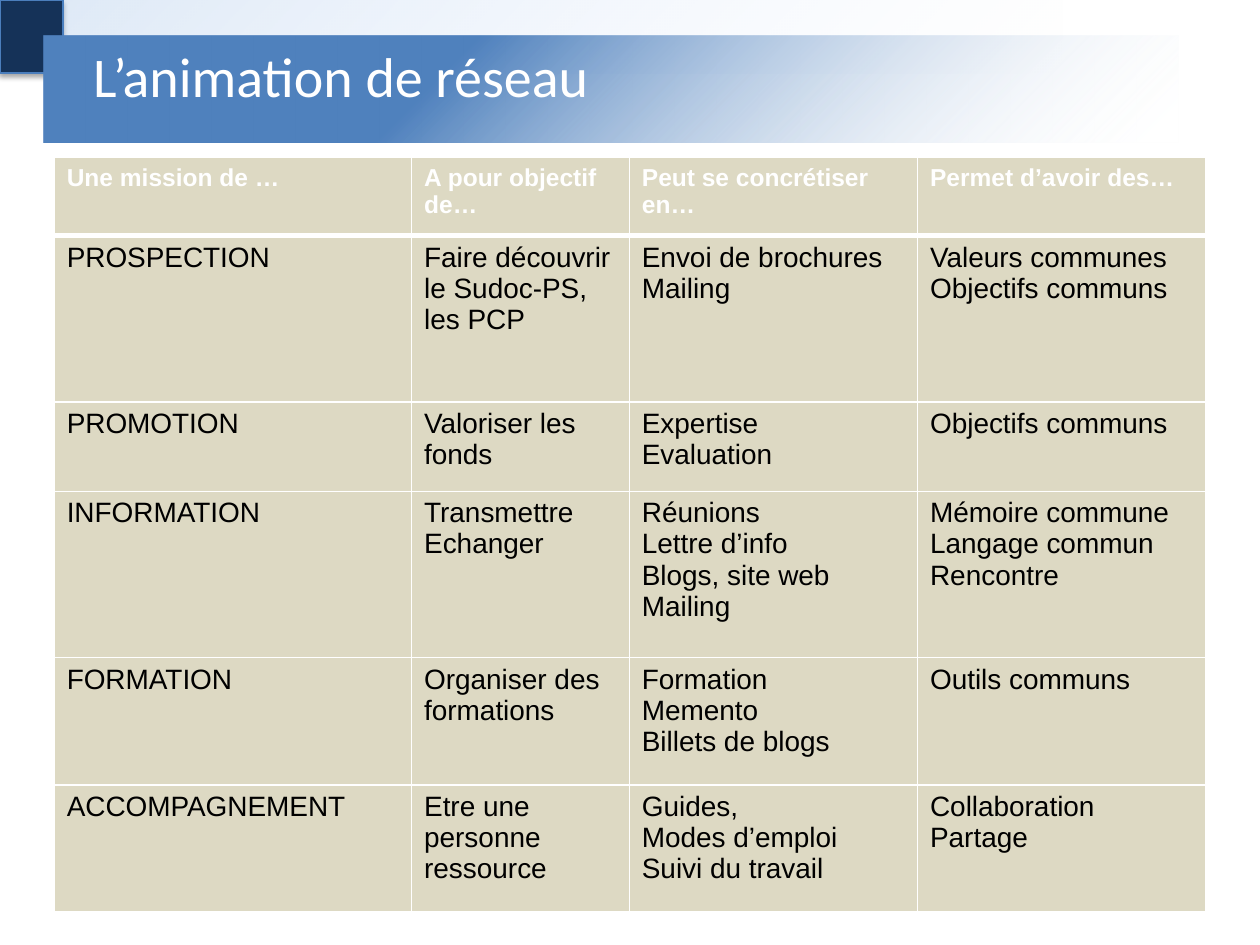
from lxml import etree
from pptx import Presentation, util as u
from pptx.dml.color import RGBColor
from pptx.enum import shapes, text
from pptx.oxml import parse_xml
from pptx.oxml.ns import nsdecls, qn

COLS, ROWS = 100, 75
WHITE = RGBColor(0xFF, 0xFF, 0xFF)
BLACK = RGBColor(0, 0, 0)
NAVY = RGBColor(0x15, 0x32, 0x58)
EDGE = RGBColor(0x4B, 0x7E, 0xBC)
BLUE = RGBColor(0x4F, 0x81, 0xBD)
PALE = RGBColor(0xA4, 0xC4, 0xFF)
MID = RGBColor(0x3F, 0x80, 0xCE)
SAND = RGBColor(0xDD, 0xD9, 0xC3)

COL_WIDTHS = [28.4, 17.3, 22.9, 22.9]
ROW_HEIGHTS = [6.2, 13.2, 7.1, 13.2, 10.1, 10.1]
MISSIONS = [
    ["Une mission de …", "A pour objectif de…", "Peut se concrétiser en…", "Permet d’avoir des…"],
    ["PROSPECTION", "Faire découvrir le Sudoc-PS, les PCP",
     "Envoi de brochures\nMailing", "Valeurs communes\nObjectifs communs"],
    ["PROMOTION", "Valoriser les fonds", "Expertise\nEvaluation", "Objectifs communs"],
    ["INFORMATION", "Transmettre Echanger", "Réunions\nLettre d’info\nBlogs, site web\nMailing",
     "Mémoire commune\nLangage commun\nRencontre"],
    ["FORMATION", "Organiser des formations", "Formation\nMemento\nBillets de blogs", "Outils communs"],
    ["ACCOMPAGNEMENT", "Etre une personne ressource",
     "Guides,\nModes d’emploi\nSuivi du travail", "Collaboration\nPartage"],
]


def grid(prs, *cells):
    """Turn x, y, width and height in grid cells into slide lengths."""
    units = (prs.slide_width / COLS, prs.slide_height / ROWS) * 2
    return [round(n * unit) for n, unit in zip(cells, units)]


def add_rect(s, box):
    """Add a rectangle without line or shadow."""
    sp = s.shapes.add_shape(shapes.MSO_SHAPE.RECTANGLE, *box)
    sp.shadow.inherit = False
    sp.line.fill.background()
    return sp


def fill_radial(sp, stops):
    """Fill a shape with a gradient that spreads from its lower right corner."""
    sp.fill.background()
    marks = "".join(
        f'<a:gs pos="{pos * 1000}"><a:srgbClr val="{color}"><a:alpha val="{alpha * 1000}"/>'
        "</a:srgbClr></a:gs>" for pos, color, alpha in stops)
    grad = parse_xml(
        f'<a:gradFill {nsdecls("a")} rotWithShape="1"><a:gsLst>{marks}</a:gsLst>'
        '<a:path path="circle"><a:fillToRect l="100000" t="100000"/></a:path></a:gradFill>')
    spPr = sp._element.spPr
    spPr.replace(spPr.find(qn("a:noFill")), grad)


def add_corner(s, box):
    """Place the dark corner square with its soft shadow."""
    sp = add_rect(s, box)
    sp.fill.solid()
    sp.fill.fore_color.rgb = NAVY
    sp.line.color.rgb = EDGE
    sp.line.width = u.Pt(0.75)
    effects = sp._element.spPr.find(qn("a:effectLst"))
    effects.append(parse_xml(
        f'<a:outerShdw {nsdecls("a")} blurRad="{u.Pt(3.1)}" dist="{u.Pt(1.8)}" dir="5400000" '
        f'rotWithShape="0"><a:srgbClr val="{BLACK}"><a:alpha val="35000"/></a:srgbClr></a:outerShdw>'))


def add_strip(s, box):
    """Place the faint strip along the top edge."""
    fill_radial(add_rect(s, box), [(0, PALE, 0), (100, MID, 17)])


def add_title(s, box, title):
    """Place the title on its fading banner."""
    sp = add_rect(s, box)
    fill_radial(sp, [(0, WHITE, 0), (65, BLUE, 100)])
    tf = sp.text_frame
    tf.word_wrap = True
    tf.margin_left = u.Inches(0.39)
    tf.vertical_anchor = text.MSO_ANCHOR.TOP
    p = tf.paragraphs[0]
    p.text = title
    p.alignment = text.PP_ALIGN.LEFT
    p.font.name, p.font.size, p.font.color.rgb = "Calibri", u.Pt(32), WHITE


def set_borders(cell, top, bottom):
    """Draw white borders around a cell, with top and bottom widths in points."""
    tcPr = cell._tc.get_or_add_tcPr()
    for i, (side, width) in enumerate(zip("LRTB", (1, 1, top, bottom))):
        ln = etree.Element(qn(f"a:ln{side}"), w=str(u.Pt(width)))
        fill = etree.SubElement(ln, qn("a:solidFill"))
        etree.SubElement(fill, qn("a:srgbClr"), val=str(WHITE))
        tcPr.insert(i, ln)


def fill_cell(cell, words, header):
    """Write and style one cell of the table."""
    cell.fill.solid()
    cell.fill.fore_color.rgb = SAND
    cell.text = words
    for p in cell.text_frame.paragraphs:
        p.font.name, p.font.bold = "Arial", header
        p.font.size = u.Pt(14 if header else 16)
        p.font.color.rgb = WHITE if header else BLACK


def add_missions(s, box):
    """Place the table of missions, sharing the box out by column and row."""
    table = s.shapes.add_table(len(MISSIONS), len(COL_WIDTHS), *box).table
    for col, width in zip(table.columns, COL_WIDTHS):
        col.width = round(box[2] * width / sum(COL_WIDTHS))
    for i, (row, height) in enumerate(zip(table.rows, ROW_HEIGHTS)):
        row.height = round(box[3] * height / sum(ROW_HEIGHTS))
        for cell, words in zip(row.cells, MISSIONS[i]):
            fill_cell(cell, words, i == 0)
            set_borders(cell, 3 if i == 1 else 1, 3 if i == 0 else 1)


def main():
    """Build the slide and save it."""
    prs = Presentation()
    prs.slide_width, prs.slide_height = u.Inches(10), u.Inches(7.5)
    s = prs.slides.add_slide(prs.slide_layouts[6])
    add_corner(s, grid(prs, 0, 0, 5, 5.8))
    add_strip(s, grid(prs, 5, 0, 79.3, 5.8))
    add_title(s, grid(prs, 3.5, 2.8, 90, 8.5), "L’animation de réseau")
    add_missions(s, grid(prs, 4.3, 12.5, 91.4, 59.9))
    prs.save("out.pptx")


if __name__ == "__main__":
    main()
